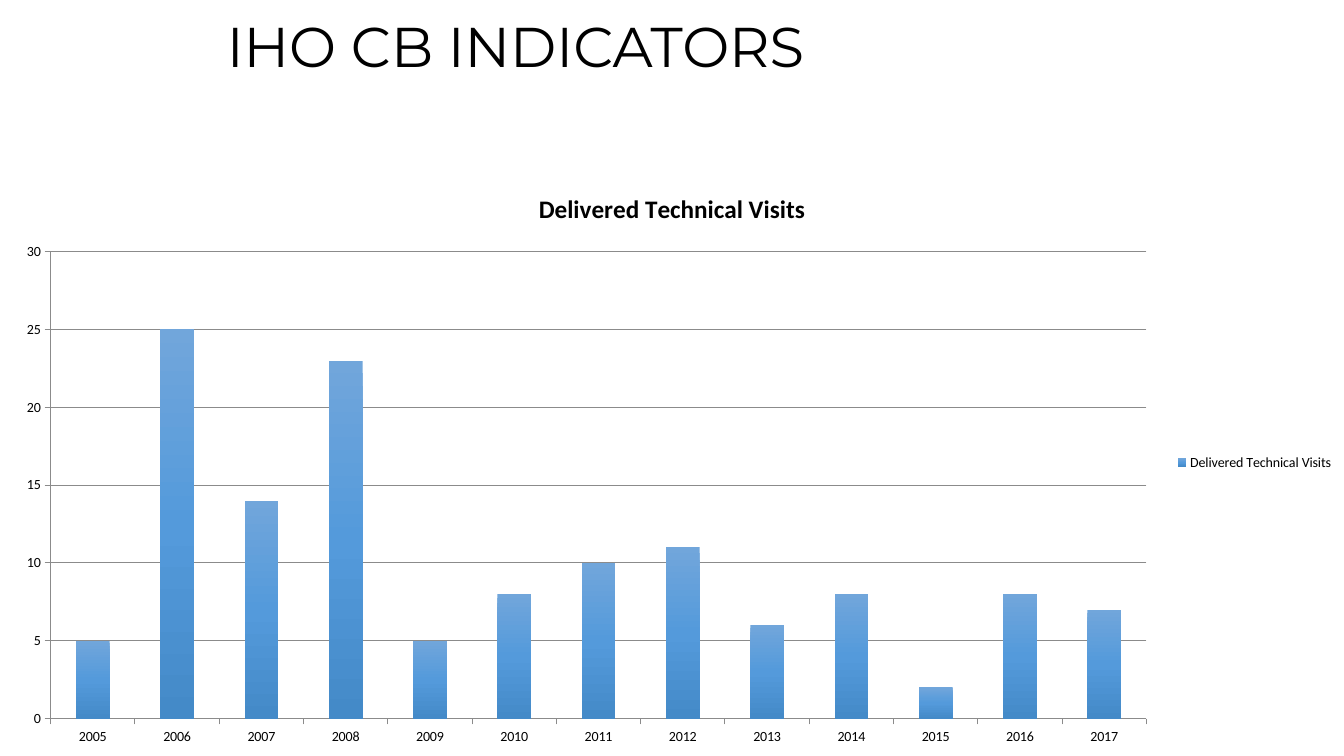
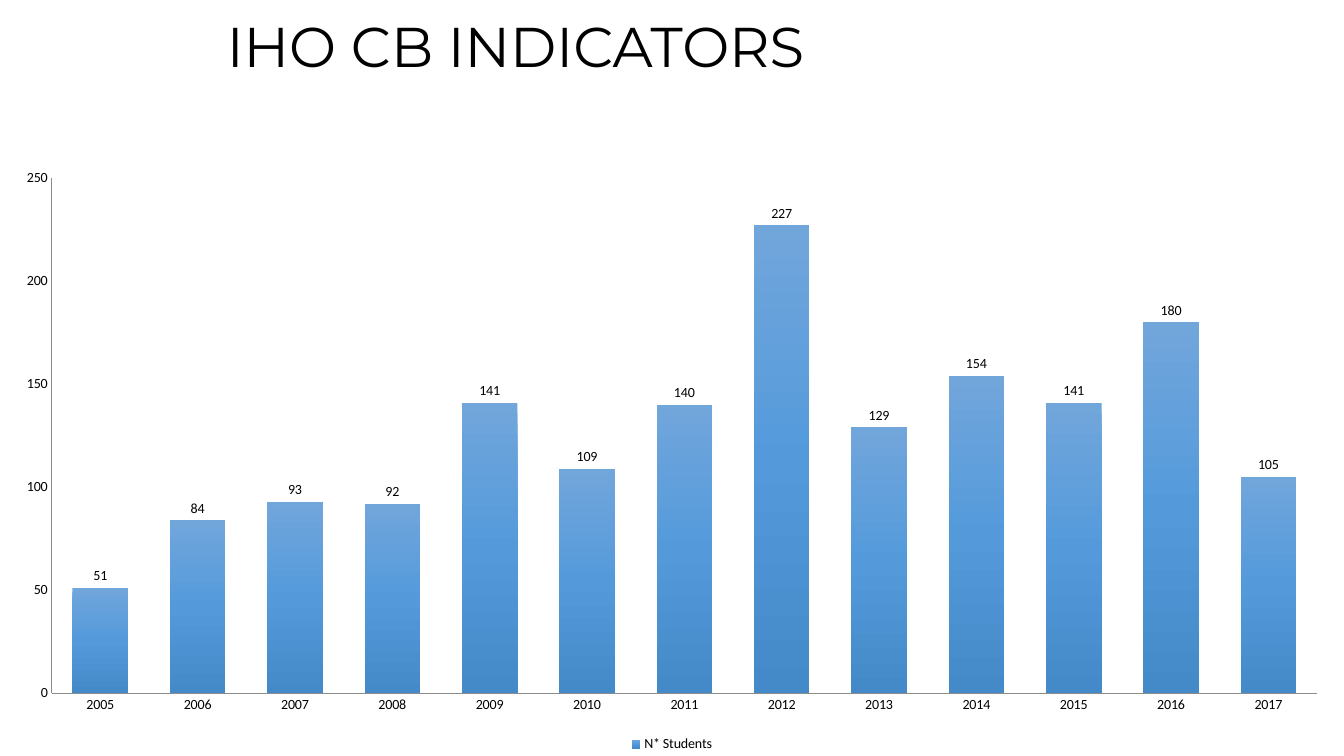
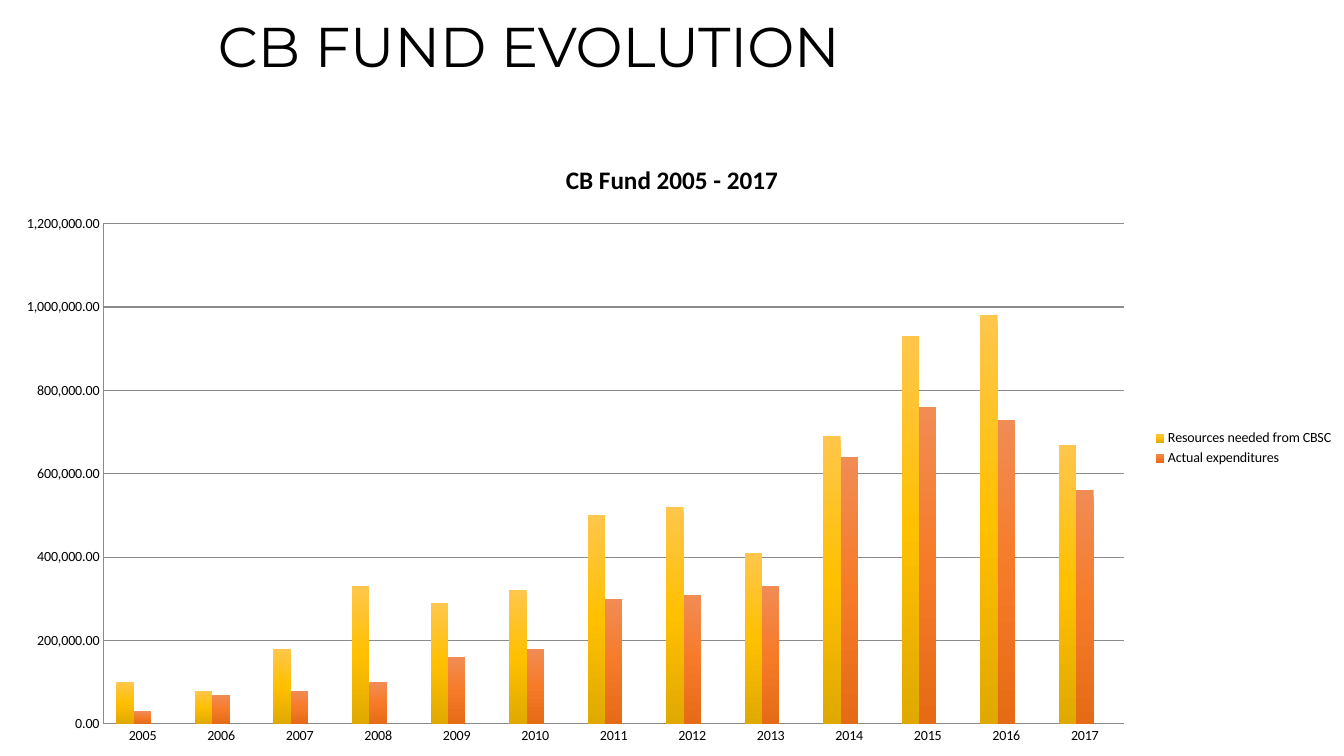
from copy import deepcopy

from lxml.etree import SubElement
from pptx import Presentation
from pptx.chart.data import CategoryChartData
from pptx.dml.color import RGBColor
from pptx.enum.chart import XL_CHART_TYPE, XL_LABEL_POSITION, XL_LEGEND_POSITION, XL_TICK_MARK
from pptx.enum.text import MSO_ANCHOR, MSO_AUTO_SIZE, PP_ALIGN
from pptx.oxml.ns import qn
from pptx.util import Inches, Pt

WIDTH, HEIGHT = 13.33, 7.5
TITLE_LEFT, TITLE_HEIGHT = 2.06, 0.97
TITLE_ONLY = 5
BLACK, GREY = "000000", "8B8B8B"
TITLE_FONT = {"name": "Montserrat", "size": Pt(40), "bold": False}
CHART_FONT = {"name": "Calibri", "size": Pt(10), "bold": False}
HEADING_FONT = {"name": "Calibri", "size": Pt(18), "bold": True}

# Top, middle and bottom colour of the columns
BLUE = ("71A6DB", "549ADB", "448AC8")
GOLD = ("FFC64B", "FFC000", "E0A900")
ORANGE = ("F18C55", "F67B28", "E56B17")

YEARS = [str(year) for year in range(2005, 2018)]
VISITS = [5, 25, 14, 23, 5, 8, 10, 11, 6, 8, 2, 8, 7]
STUDENTS = [51, 84, 93, 92, 141, 109, 140, 227, 129, 154, 141, 180, 105]
NEEDED = [100000, 80000, 180000, 330000, 290000, 320000, 500000,
          520000, 410000, 690000, 930000, 980000, 670000]
SPENT = [30000, 70000, 80000, 100000, 160000, 180000, 300000,
         310000, 330000, 640000, 760000, 730000, 560000]


def colour(hex_string):
    return RGBColor.from_string(hex_string)


def style_font(font, formats):
    for attribute, value in formats.items():
        setattr(font, attribute, value)
    font.color.rgb = colour(BLACK)


def add_titled_slide(deck, heading, indent=0.1):
    slide = deck.slides.add_slide(deck.slide_layouts[TITLE_ONLY])
    title = slide.shapes.title
    title.left, title.top = Inches(TITLE_LEFT), 0
    title.width, title.height = Inches(WIDTH - TITLE_LEFT), Inches(TITLE_HEIGHT)
    frame = title.text_frame
    frame.text = heading
    frame.auto_size = MSO_AUTO_SIZE.NONE
    frame.vertical_anchor = MSO_ANCHOR.MIDDLE
    frame.margin_left = Inches(indent)
    line = frame.paragraphs[0]
    line.alignment = PP_ALIGN.LEFT
    line.line_spacing = 0.9
    style_font(line.runs[0].font, TITLE_FONT)
    return slide


def shade_columns(series, shades):
    """Fill a series from top to bottom with three evenly spaced shades."""
    series.invert_if_negative = False
    fill = series.format.fill
    fill.gradient()
    fill.gradient_angle = 270
    stop_list = next(series._element.iter(qn("a:gsLst")))
    stop_list.insert(1, deepcopy(stop_list[0]))
    for stop, position, shade in zip(fill.gradient_stops, (0, 0.5, 1), shades):
        stop.position = position
        stop.color.rgb = colour(shade)


def style_axis(axis, tick, gridlines=False):
    axis.major_tick_mark = tick
    axis.minor_tick_mark = XL_TICK_MARK.NONE
    axis.has_major_gridlines = gridlines
    lines = [axis.format.line]
    if gridlines:
        lines.append(axis.major_gridlines.format.line)
    for line in lines:
        line.color.rgb = colour(GREY)
        line.width = Pt(0.75)


def add_legend(chart, position):
    chart.has_legend = True
    chart.legend.position = position
    chart.legend.include_in_layout = False
    style_font(chart.legend.font, CHART_FONT)


def hide_legend_entry(chart, index):
    legend = chart.legend._element
    entry = SubElement(legend, qn("c:legendEntry"))
    SubElement(entry, qn("c:idx")).set("val", str(index))
    SubElement(entry, qn("c:delete")).set("val", "1")
    legend.find(qn("c:legendPos")).addnext(entry)


def add_column_chart(slide, top, columns, heading=None, gap=150, gridlines=True,
                     tick=XL_TICK_MARK.NONE, legend=XL_LEGEND_POSITION.RIGHT):
    """Draw (name, values, shades) columns from top down to the slide's foot."""
    data = CategoryChartData()
    data.categories = YEARS
    for name, values, _ in columns:
        data.add_series(name, values)
    chart = slide.shapes.add_chart(
        XL_CHART_TYPE.COLUMN_CLUSTERED, 0, Inches(top),
        Inches(WIDTH), Inches(HEIGHT - top), data).chart
    style_font(chart.font, CHART_FONT)
    chart.has_title = heading is not None
    if heading:
        frame = chart.chart_title.text_frame
        frame.text = heading
        style_font(frame.paragraphs[0].runs[0].font, HEADING_FONT)
    plot = chart.plots[0]
    plot.gap_width, plot.overlap, plot.vary_by_categories = gap, 0, False
    for series, (_, _, shades) in zip(plot.series, columns):
        shade_columns(series, shades)
    style_axis(chart.category_axis, tick)
    style_axis(chart.value_axis, tick, gridlines)
    add_legend(chart, legend)
    return chart


def show_values(chart):
    plot = chart.plots[0]
    plot.has_data_labels = True
    labels = plot.data_labels
    labels.show_value = True
    labels.position = XL_LABEL_POSITION.OUTSIDE_END
    style_font(labels.font, CHART_FONT)


def main():
    deck = Presentation()
    deck.slide_width, deck.slide_height = Inches(WIDTH), Inches(HEIGHT)

    visits_slide = add_titled_slide(deck, "IHO CB INDICATORS", indent=0.19)
    add_column_chart(visits_slide, 1.68, [("Delivered Technical Visits", VISITS, BLUE)],
                     heading="Delivered Technical Visits", tick=XL_TICK_MARK.OUTSIDE)

    students_slide = add_titled_slide(deck, "IHO CB INDICATORS", indent=0.19)
    students = add_column_chart(students_slide, 1.57, [("N* Students", STUDENTS, BLUE)],
                                gap=75, gridlines=False, legend=XL_LEGEND_POSITION.BOTTOM)
    show_values(students)

    fund_slide = add_titled_slide(deck, "CB FUND EVOLUTION")
    fund_columns = [("Resources needed from CBSC", NEEDED, GOLD),
                    ("Actual expenditures", SPENT, ORANGE),
                    ("Series 3", [0], BLUE)]
    fund = add_column_chart(fund_slide, 1.39, fund_columns, heading="CB Fund 2005 - 2017")
    hide_legend_entry(fund, 2)
    amounts = fund.value_axis.tick_labels
    amounts.number_format = "#,##0.00"
    amounts.number_format_is_linked = False

    deck.save("out.pptx")


if __name__ == "__main__":
    main()
